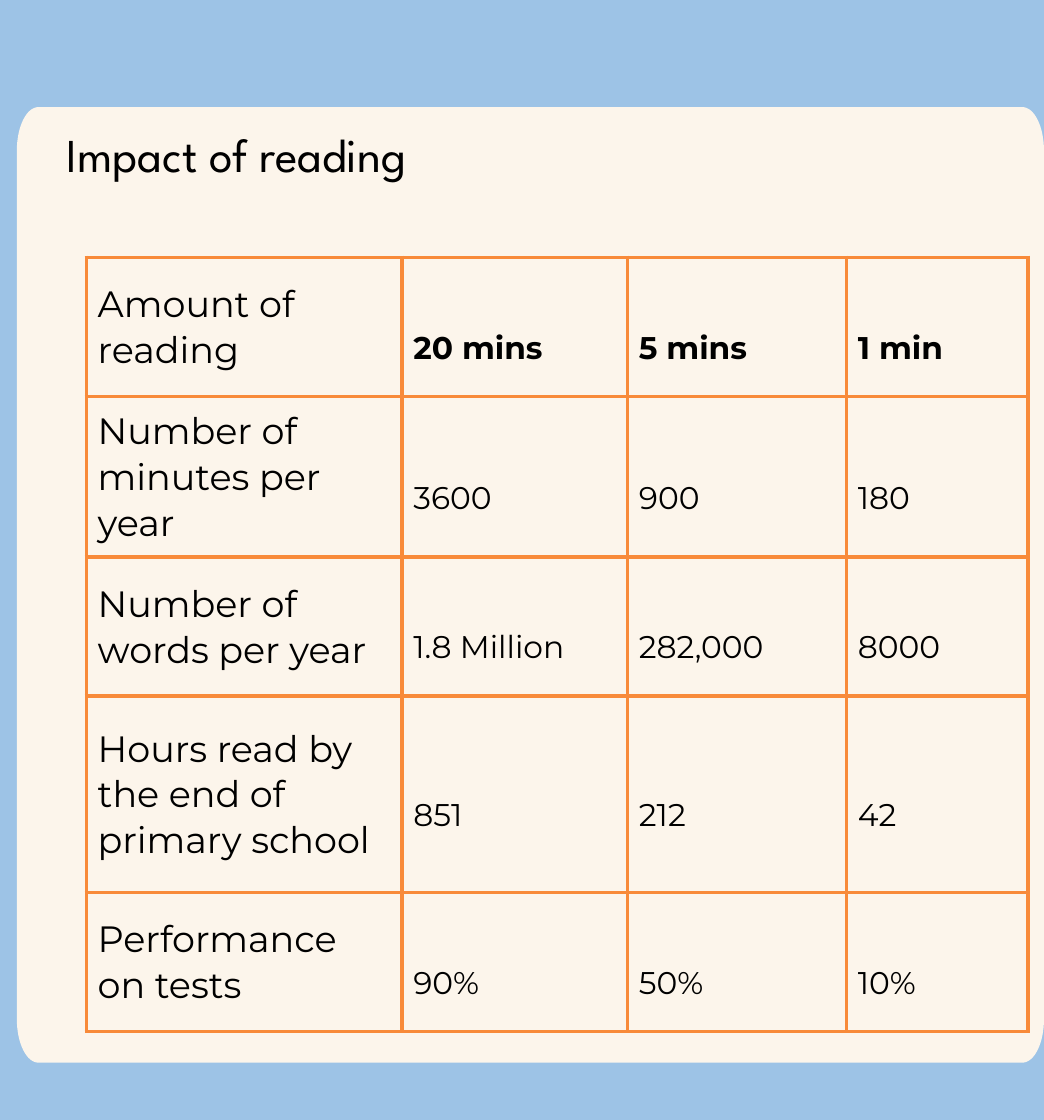
import math
from dataclasses import dataclass

import pptx
import pptx.util
import pptx.dml.color
import pptx.enum.text
from lxml import etree
from pptx.util import Inches, Pt


@dataclass(frozen=True)
class Theme:
    sky: str = "9DC3E6"
    cream: str = "FCF5EB"
    orange: str = "F88A39"
    ink: str = "000000"
    title_font: str = "League Spartan"
    body_font: str = "Montserrat"
    title_size: float = 36.1
    label_size: float = 28
    value_size: float = 24
    title_leading: float = 43.3
    label_leading: float = 35.2
    value_leading: float = 61.8
    border: float = 3


THEME = Theme()

COLUMNS = [3.36, 2.4, 2.33, 1.93]
ROW_HEIGHTS = [1.48, 1.51, 1.48, 2.09, 1.48]
READING_IMPACT = [
    ["Amount of reading", "20 mins", "5 mins", "1 min"],
    ["Number of minutes per year", "3600", "900", "180"],
    ["Number of words per year", "1.8 Million", "282,000", "8000"],
    ["Hours read by the end of primary school", "851", "212", "42"],
    ["Performance on tests", "90%", "50%", "10%"],
]


def rgb(color):
    return pptx.dml.color.RGBColor.from_string(color)


def write_text(tf, text, *, font, size, leading, bold=False, color=THEME.ink):
    tf.word_wrap = True
    p = tf.paragraphs[0]
    p.line_spacing = Pt(leading)
    r = p.add_run()
    r.text = text
    r.font.name = font
    r.font.size = Pt(size)
    r.font.bold = bold
    r.font.color.rgb = rgb(color)


def add_card(s, left, top, width, height, rx, ry, steps=16):
    """Panel whose corners are quarter ellipses of radii rx and ry."""
    right, bottom = left + width, top + height
    centres = [(right - rx, bottom - ry), (left + rx, bottom - ry),
               (left + rx, top + ry), (right - rx, top + ry)]
    points = []
    for quarter, (cx, cy) in enumerate(centres):
        for i in range(steps + 1):
            angle = (quarter + i / steps) * math.pi / 2
            points.append((Inches(cx + rx * math.cos(angle)),
                           Inches(cy + ry * math.sin(angle))))
    builder = s.shapes.build_freeform(*points[0])
    builder.add_line_segments(points[1:], close=True)
    sp = builder.convert_to_shape()
    sp.shadow.inherit = False
    sp.fill.solid()
    sp.fill.fore_color.rgb = rgb(THEME.cream)
    sp.line.fill.background()


def add_title(s, text, left, top, width, height):
    tf = s.shapes.add_textbox(*map(Inches, (left, top, width, height))).text_frame
    tf.margin_left = tf.margin_right = tf.margin_top = tf.margin_bottom = 0
    write_text(tf, text, font=THEME.title_font, size=THEME.title_size,
               leading=THEME.title_leading)


def set_borders(cell, color, width):
    ns = "{http://schemas.openxmlformats.org/drawingml/2006/main}"
    tc_pr = cell._tc.get_or_add_tcPr()
    for i, side in enumerate("LRTB"):
        ln = etree.Element(f"{ns}ln{side}", w=str(Pt(width)))
        fill = etree.SubElement(ln, f"{ns}solidFill")
        etree.SubElement(fill, f"{ns}srgbClr", val=color)
        tc_pr.insert(i, ln)


def fill_cell(cell, text, is_label, is_header):
    cell.fill.background()
    cell.vertical_anchor = pptx.enum.text.MSO_ANCHOR.MIDDLE
    cell.margin_left = cell.margin_right = Inches(0.12)
    cell.margin_top = cell.margin_bottom = Inches(0.12)
    set_borders(cell, THEME.orange, THEME.border)
    write_text(cell.text_frame, text, font=THEME.body_font,
               size=THEME.label_size if is_label else THEME.value_size,
               leading=THEME.label_leading if is_label else THEME.value_leading,
               bold=is_header and not is_label)


def add_impact_table(s, left, top):
    frame = s.shapes.add_table(
        len(ROW_HEIGHTS), len(COLUMNS), Inches(left), Inches(top),
        Inches(sum(COLUMNS)), Inches(sum(ROW_HEIGHTS)))
    table = frame.table
    table.first_row = table.horz_banding = False
    for column, width in zip(table.columns, COLUMNS):
        column.width = Inches(width)
    for row, height in zip(table.rows, ROW_HEIGHTS):
        row.height = Inches(height)
    for i, texts in enumerate(READING_IMPACT):
        for j, text in enumerate(texts):
            fill_cell(table.cell(i, j), text, is_label=j == 0, is_header=i == 0)


def main():
    prs = pptx.Presentation()
    prs.slide_width, prs.slide_height = Inches(11.11), Inches(11.92)
    s = prs.slides.add_slide(prs.slide_layouts[6])

    # Background and card
    s.background.fill.solid()
    s.background.fill.fore_color.rgb = rgb(THEME.sky)
    add_card(s, 0.18, 1.14, 10.93, 10.17, rx=0.23, ry=0.46)

    # Table and title
    add_impact_table(s, 0.92, 2.74)
    add_title(s, "Impact of reading", 0.71, 1.34, 9.86, 0.6)

    prs.save("out.pptx")


if __name__ == "__main__":
    main()
